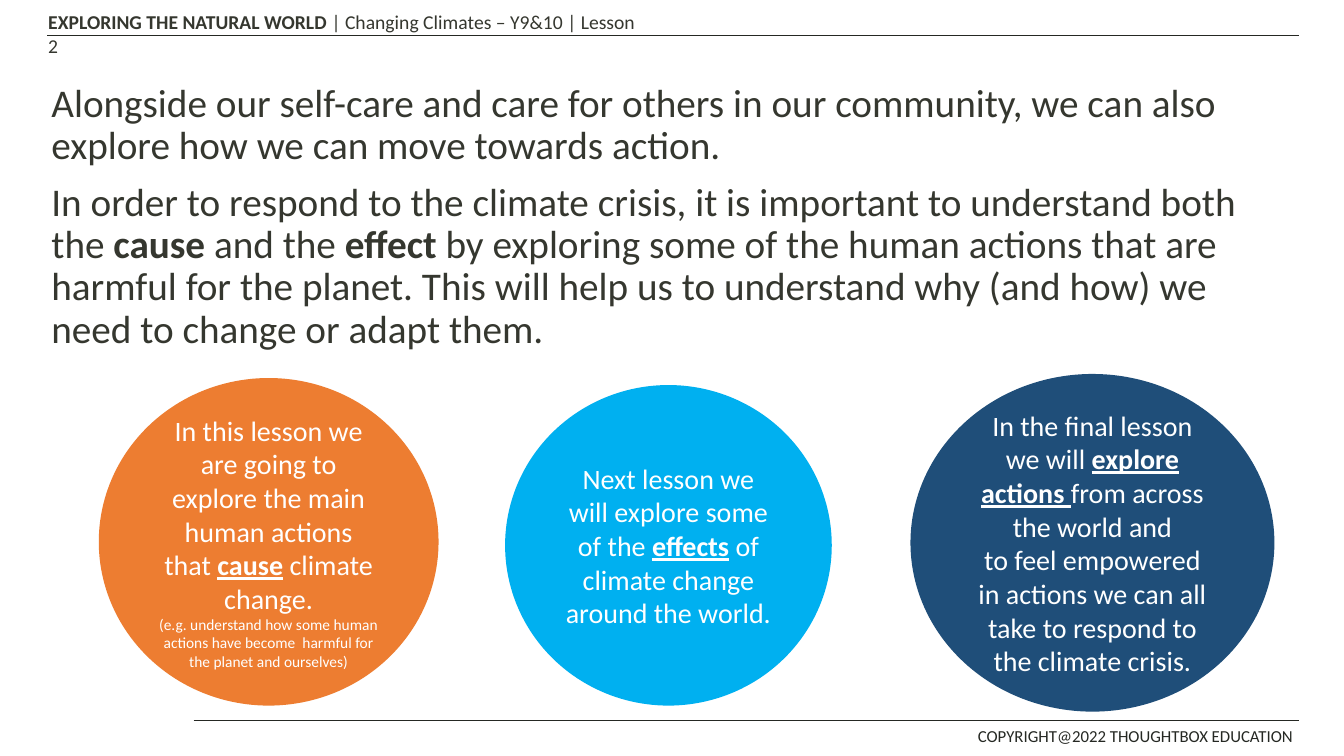
from dataclasses import dataclass
from lxml import etree
from pptx import Presentation
from pptx.dml.color import RGBColor
from pptx.enum.shapes import MSO_CONNECTOR, MSO_SHAPE
from pptx.enum.text import MSO_ANCHOR, MSO_AUTO_SIZE, PP_ALIGN
from pptx.oxml.ns import qn
from pptx.util import Emu, Pt

LINE = MSO_CONNECTOR.STRAIGHT
OVAL = MSO_SHAPE.OVAL
MIDDLE = MSO_ANCHOR.MIDDLE
TOP = MSO_ANCHOR.TOP
FIXED = MSO_AUTO_SIZE.NONE
CENTER = PP_ALIGN.CENTER
LEFT = PP_ALIGN.LEFT
SCALE = 9144


@dataclass(frozen=True)
class Theme:
    font: str = "Calibri"
    ink: str = "35372F"
    rule: str = "252823"
    white: str = "FFFFFF"
    orange: str = "ED7D31"
    sky: str = "00B0F0"
    navy: str = "1F4E79"
    body: int = 28
    circle: int = 20
    head: int = 14
    foot: int = 12
    note: int = 11


THEME = Theme()

HEAD = "*EXPLORING THE NATURAL WORLD *| Changing Climates – Y9&10 | Lesson 2"
FOOT = "COPYRIGHT@2022 THOUGHTBOX EDUCATION"
BODY = [
    "Alongside our self-care and care for others in our community, "
    "we can also explore how we can move towards action.",
    "In order to respond to the climate crisis, it is important to understand "
    "both the *cause* and the *effect* by exploring some of the human actions "
    "that are harmful for the planet. This will help us to understand why "
    "(and how) we need to change or adapt them.",
]
CIRCLES = [
    ((98, 375, 337, 325), THEME.orange,
     "In this lesson we are going to explore the main human actions that "
     "*cause* climate change.",
     "(e.g. understand how some human actions have become  harmful for "
     "the planet and ourselves)"),
    ((501, 382, 324, 318), THEME.sky,
     "Next lesson we will explore some of the *effects* of climate change "
     "around the world.", None),
    ((903, 371, 361, 335), THEME.navy,
     "In the final lesson we will *explore actions *from across the world and\n"
     "to feel empowered in actions we can all take to respond to the "
     "climate crisis.", None),
]


def px(*vals):
    return [Emu(v * SCALE) for v in vals]


def color(code):
    return RGBColor.from_string(code)


def write(para, text, size, ink, align=LEFT, under=False):
    para.alignment = align
    for num, part in enumerate(text.split("*")):
        for row, line in enumerate(part.split("\n")):
            if row:
                para.add_line_break()
            if not line:
                continue
            run = para.add_run()
            run.text = line
            font = run.font
            font.name = THEME.font
            font.size = Pt(size)
            font.color.rgb = color(ink)
            font.bold = num % 2 == 1
            font.underline = under and num % 2 == 1


def rule(slide, left, right, top):
    line = slide.shapes.add_connector(LINE, *px(left, top, right, top))
    line.line.color.rgb = color(THEME.rule)
    line.line.width = Pt(1)
    props = line._element.spPr
    etree.SubElement(props, qn("a:effectLst"))


def label(slide, box, text, size, ink):
    frame = slide.shapes.add_textbox(*px(*box)).text_frame
    frame.word_wrap = True
    write(frame.paragraphs[0], text, size, ink)


def header(slide, box):
    left, top, width, height = box
    rule(slide, left + 9, left + width, top + 30)
    label(slide, (left, top, 608, height), HEAD, THEME.head, THEME.ink)


def footer(slide, box):
    left, top, width, height = box
    rule(slide, left, left + width, top)
    label(slide, (left + 768, top, 340, height), FOOT, THEME.foot, THEME.rule)


def body(slide, box):
    hold = slide.placeholders[1]
    hold.left, hold.top, hold.width, hold.height = px(*box)
    frame = hold.text_frame
    frame.word_wrap = True
    frame.auto_size = FIXED
    frame.vertical_anchor = TOP
    for num, text in enumerate(BODY):
        para = frame.add_paragraph() if num else frame.paragraphs[0]
        props = para._p.get_or_add_pPr()
        props.set("marL", "0")
        props.set("indent", "0")
        etree.SubElement(props, qn("a:buNone"))
        para.line_spacing = 0.9
        para.space_before = Pt(10 if num else 0)
        write(para, text, THEME.body, THEME.ink)


def circle(slide, box, fill, text, note):
    oval = slide.shapes.add_shape(OVAL, *px(*box))
    oval.shadow.inherit = False
    oval.fill.solid()
    oval.fill.fore_color.rgb = color(fill)
    oval.line.fill.background()
    frame = oval.text_frame
    frame.word_wrap = True
    frame.vertical_anchor = MIDDLE
    write(frame.paragraphs[0], text, THEME.circle, THEME.white, CENTER, True)
    if note:
        write(frame.add_paragraph(), note, THEME.note, THEME.white, CENTER)


def main():
    deck = Presentation()
    deck.slide_width, deck.slide_height = px(1333, 750)
    slide = deck.slides.add_slide(deck.slide_layouts[1])
    title = slide.shapes.title._element
    title.getparent().remove(title)
    header(slide, (38, 5, 1250, 34))
    footer(slide, (192, 715, 1096, 31))
    body(slide, (41, 78, 1240, 476))
    for item in CIRCLES:
        circle(slide, *item)
    deck.save("out.pptx")


if __name__ == "__main__":
    main()
